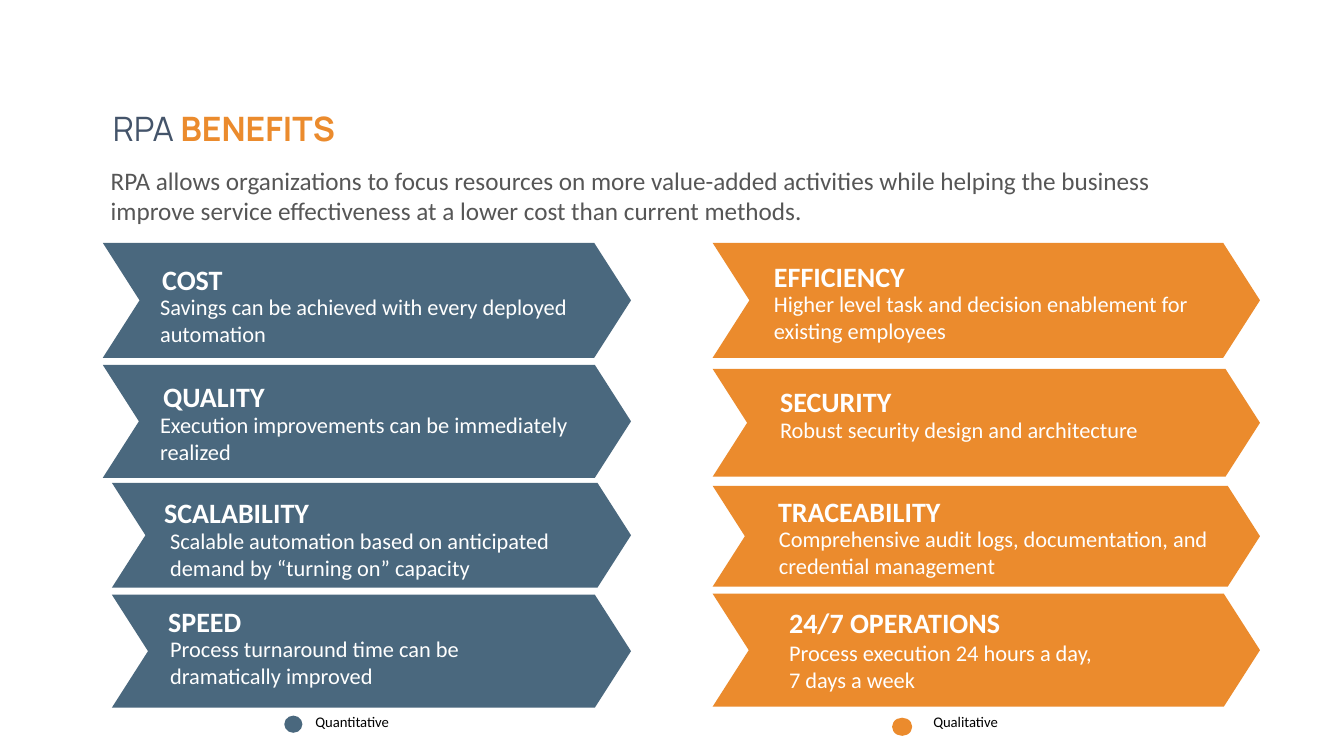
"""Build the RPA benefits slide: two columns of chevrons with a legend."""
import pptx
import pptx.util
import pptx.dml.color
import pptx.enum.shapes
import pptx.enum.text

THEME = {
    "blue": "4A687E", "gold": "EB8B2D", "navy": "44546A",
    "gray": "565656", "white": "FFFFFF", "black": "000000",
    "font": "Calibri", "display": "Manrope",
    "title": 24, "lead": 18, "head": 20, "body": 16, "note": 10.5,
}
RGB = pptx.dml.color.RGBColor.from_string
SHAPE = pptx.enum.shapes.MSO_SHAPE
CELL = pptx.util.Inches(0.1)


def grid(*cells):
    """Turn counts of grid cells into lengths."""
    return [round(cell * CELL) for cell in cells]


def write(frame, text, size="body", color="white", bold=False, font="font"):
    """Add text to the last paragraph, with a new paragraph at each line end."""
    frame.word_wrap = True
    for row, line in enumerate(text.split("\n")):
        para = frame.add_paragraph() if row else frame.paragraphs[-1]
        run = para.add_run()
        run.text = line
        run.font.name = THEME[font]
        run.font.size = pptx.util.Pt(THEME[size])
        run.font.bold = bold
        run.font.color.rgb = RGB(THEME[color])


deck = pptx.Presentation()
deck.slide_width, deck.slide_height = grid(133.33, 75)
slide = deck.slides.add_slide(deck.slide_layouts[5])
shapes = slide.shapes

title = shapes.title
title.left, title.top, title.width, title.height = grid(10.2, 10.2, 117.3, 5)
frame = title.text_frame
frame.auto_size = pptx.enum.text.MSO_AUTO_SIZE.NONE
frame.vertical_anchor = pptx.enum.text.MSO_ANCHOR.MIDDLE
frame.paragraphs[0].alignment = pptx.enum.text.PP_ALIGN.LEFT
write(frame, "RPA ", "title", "navy", font="display")
write(frame, "BENEFITS", "title", "gold", True, "display")

lead = shapes.add_textbox(*grid(10, 15.9, 111.6, 7.1))
write(lead.text_frame, "RPA allows organizations to focus resources on more "
      "value-added activities while helping the business improve service "
      "effectiveness at a lower cost than current methods.", "lead", "gray")

# Each card: arrow left, top, height; head left, top; body left, top; words.
SIDES = [
    ("blue", 62.6, 44.7, [
        (10.2, 24.1, 11.4, 15.1, 25.6, 14.9, 28.6, "COST",
         "Savings can be achieved with every deployed automation"),
        (10.2, 36.2, 11.2, 15.2, 37.2, 14.9, 40.3, "QUALITY",
         "Execution improvements can be immediately realized"),
        (11.1, 47.9, 10.4, 15.3, 48.7, 15.9, 51.8, "SCALABILITY",
         "Scalable automation based on anticipated demand by “turning on” capacity"),
        (11.1, 59, 11.2, 15.7, 59.5, 15.9, 62.5, "SPEED",
         "Process turnaround time can be\ndramatically improved"),
    ]),
    ("gold", 125, 46.4, [
        (70.7, 24.1, 11.4, 75.8, 25.3, 75.8, 28.3, "EFFICIENCY",
         "Higher level task and decision enablement for existing employees"),
        (70.7, 36.6, 10.7, 76.4, 37.7, 76.4, 40.8, "SECURITY",
         "Robust security design and architecture"),
        (70.7, 48.2, 10, 76.2, 48.6, 76.3, 51.6, "TRACEABILITY",
         "Comprehensive audit logs, documentation, and credential management"),
        (70.7, 58.9, 11.2, 77.3, 59.6, 77.3, 62.9, "24/7 OPERATIONS",
         "Process execution 24 hours a day,\n7 days a week"),
    ]),
]
marks = []
for color, right, wide, cards in SIDES:
    for left, top, high, hx, hy, bx, by, head, body in cards:
        arrow = shapes.add_shape(SHAPE.CHEVRON, *grid(left, top, right - left, high))
        arrow.adjustments[0] = 0.32
        marks.append((arrow, color))
        box = shapes.add_textbox(*grid(hx, hy, 32.2, 4.4))
        write(box.text_frame, head, "head", bold=True)
        box = shapes.add_textbox(*grid(bx, by, wide, 6.4))
        write(box.text_frame, body)

LEGEND = [
    ("blue", 28.2, 71, 1.8, 1.7, 30.3, "Quantitative"),
    ("gold", 88.5, 71.2, 2, 1.8, 91.6, "Qualitative"),
]
for color, left, top, wide, high, tx, label in LEGEND:
    dot = shapes.add_shape(SHAPE.OVAL, *grid(left, top, wide, high))
    marks.append((dot, color))
    box = shapes.add_textbox(*grid(tx, 70.2, 35.8, 3))
    write(box.text_frame, label, "note", "black")

for mark, color in marks:
    mark.shadow.inherit = False
    mark.fill.solid()
    mark.fill.fore_color.rgb = RGB(THEME[color])
    mark.line.fill.background()

deck.save("out.pptx")
